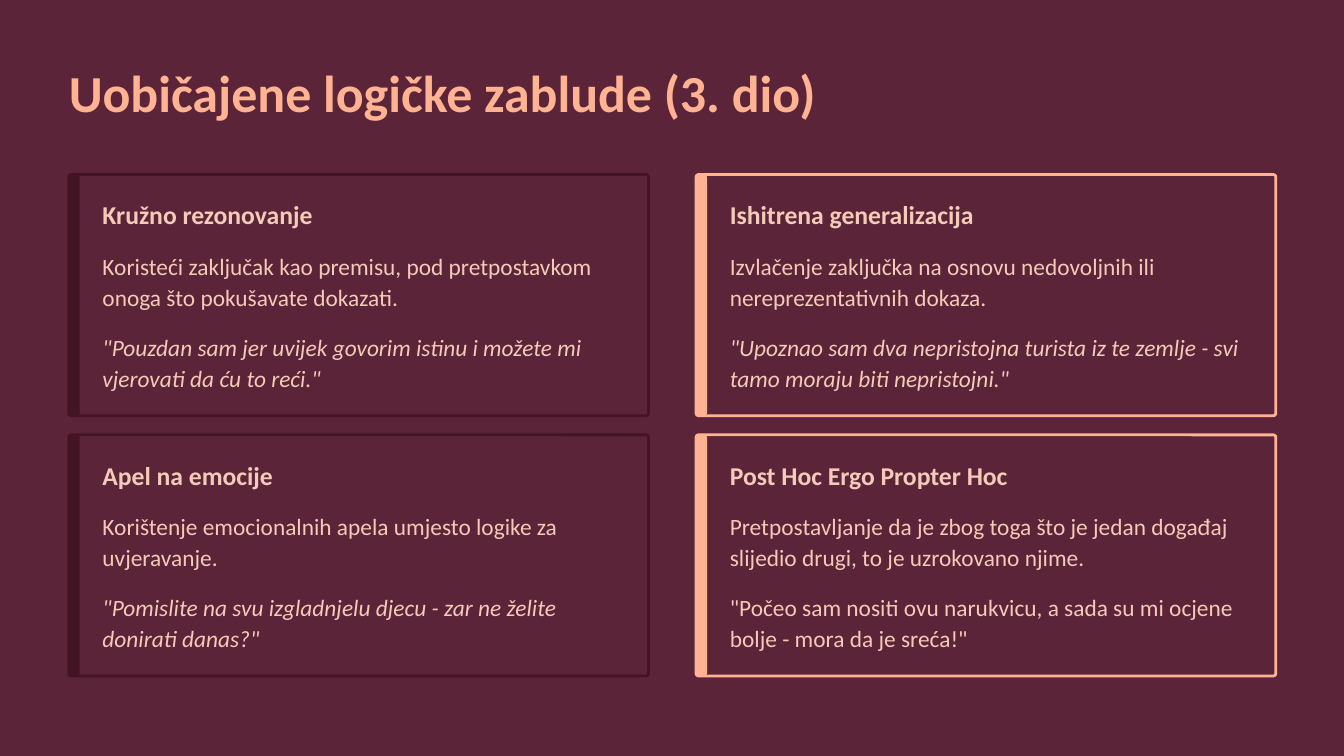
from pptx import Presentation
from pptx.dml.color import RGBColor
from pptx.enum.shapes import MSO_SHAPE as SHAPE
from pptx.util import Cm, Pt

FONT = "Calibri"
COLORS = {
    "background": "5C2438",
    "dark": "421424",
    "peach": "FFB393",
    "text": "F4CAB8",
}

# Card grid, in centimetres
LEFT, TOP = 2.08, 5.28
CARD_W, CARD_H = 17.53, 7.29
STEP_X, STEP_Y = 18.97, 7.87
BAR_W = 0.33
TEXT_INDENT, TEXT_W = 1.02, 15.82

# Each column: accent colour, then cards of heading, definition, example, italic
COLUMNS = [
    ("dark", [
        ("Kružno rezonovanje",
         "Koristeći zaključak kao premisu, pod pretpostavkom onoga što pokušavate dokazati.",
         '"Pouzdan sam jer uvijek govorim istinu i možete mi vjerovati da ću to reći."', True),
        ("Apel na emocije",
         "Korištenje emocionalnih apela umjesto logike za uvjeravanje.",
         '"Pomislite na svu izgladnjelu djecu - zar ne želite donirati danas?"', True),
    ]),
    ("peach", [
        ("Ishitrena generalizacija",
         "Izvlačenje zaključka na osnovu nedovoljnih ili nereprezentativnih dokaza.",
         '"Upoznao sam dva nepristojna turista iz te zemlje - svi tamo moraju biti nepristojni."', True),
        ("Post Hoc Ergo Propter Hoc",
         "Pretpostavljanje da je zbog toga što je jedan događaj slijedio drugi, to je uzrokovano njime.",
         '"Počeo sam nositi ovu narukvicu, a sada su mi ocjene bolje - mora da je sreća!"', False),
    ]),
]


def rgb(name):
    return RGBColor.from_string(COLORS[name])


def add_text(s, text, x, y, w, h, size, spacing, color="text", bold=False, italic=False, wrap=True):
    tf = s.shapes.add_textbox(Cm(x), Cm(y), Cm(w), Cm(h)).text_frame
    tf.margin_left = tf.margin_right = tf.margin_top = tf.margin_bottom = 0
    tf.word_wrap = wrap
    p = tf.paragraphs[0]
    p.text = text
    p.line_spacing = Pt(spacing)
    p.font.name, p.font.size = FONT, Pt(size)
    p.font.bold, p.font.italic = bold, italic
    p.font.color.rgb = rgb(color)


def add_panel(s, x, y, w, h, radius, fill, line=None):
    sp = s.shapes.add_shape(SHAPE.ROUNDED_RECTANGLE, Cm(x), Cm(y), Cm(w), Cm(h))
    sp.adjustments[0] = radius
    sp.shadow.inherit = False
    sp.fill.solid()
    sp.fill.fore_color.rgb = rgb(fill)
    if line:
        sp.line.color.rgb = rgb(line)
        sp.line.width = Pt(2.4)
    else:
        sp.line.fill.background()


def add_card(s, x, y, accent, heading, definition, example, italic):
    # Outlined panel with an accent bar on its left edge
    add_panel(s, x, y, CARD_W, CARD_H, 0.01, "background", accent)
    add_panel(s, x, y, BAR_W, CARD_H, 0.26, accent)

    # Heading, definition and example
    text_x = x + TEXT_INDENT
    add_text(s, heading, text_x, y + 0.69, TEXT_W, 0.99, 22, 28, bold=True, wrap=False)
    add_text(s, definition, text_x, y + 2.26, TEXT_W, 1.91, 20, 26.5)
    add_text(s, example, text_x, y + 4.7, TEXT_W, 1.91, 20, 26.5, italic=italic)


def main():
    prs = Presentation()
    prs.slide_width, prs.slide_height = Cm(40.64), Cm(22.86)
    s = prs.slides.add_slide(prs.slide_layouts[6])
    s.background.fill.solid()
    s.background.fill.fore_color.rgb = rgb("background")

    # Title
    add_text(s, "Uobičajene logičke zablude (3. dio)", LEFT, 1.75, 25.53, 1.98,
             44.5, 56, color="peach", bold=True, wrap=False)

    # Two columns of cards
    for col, (accent, cards) in enumerate(COLUMNS):
        for row, card in enumerate(cards):
            add_card(s, LEFT + col * STEP_X, TOP + row * STEP_Y, accent, *card)

    prs.save("out.pptx")


if __name__ == "__main__":
    main()
